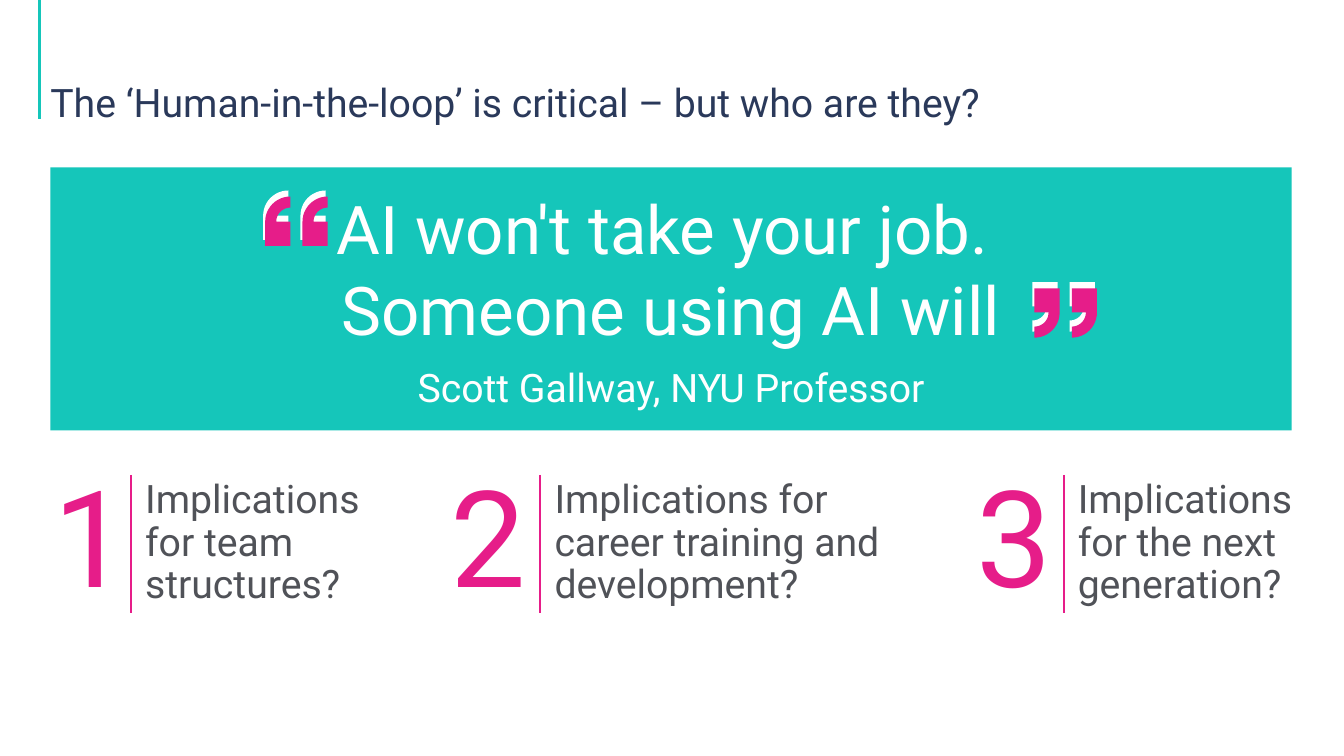
from dataclasses import dataclass
from math import cos, pi, sin

from lxml.etree import SubElement
from pptx import Presentation
from pptx.dml.color import RGBColor
from pptx.enum.shapes import MSO_CONNECTOR, MSO_SHAPE
from pptx.enum.text import MSO_ANCHOR, MSO_AUTO_SIZE, PP_ALIGN
from pptx.oxml.ns import qn
from pptx.util import Inches, Pt


@dataclass(frozen=True)
class Theme:
    font: str = "Roboto"
    navy: str = "2A395A"
    teal: str = "15C6BA"
    pink: str = "E61D89"
    grey: str = "505258"
    white: str = "FFFFFF"
    body: int = 28
    quote: int = 48
    number: int = 96


@dataclass(frozen=True)
class Box:
    left: float
    top: float
    width: float
    height: float

    def x(self, percent):
        return int(self.left + self.width * percent / 100)

    def y(self, percent):
        return int(self.top + self.height * percent / 100)

    def area(self, left, top, width, height):
        """A smaller box, given in percent of this one."""
        return Box(self.x(left), self.y(top),
                   int(self.width * width / 100), int(self.height * height / 100))

    def frame(self):
        return self.left, self.top, self.width, self.height


THEME = Theme()
SLIDE = Box(0, 0, Inches(13.33), Inches(7.5))
TITLE = "The ‘Human-in-the-loop’ is critical – but who are they?"
QUOTE = "AI won't take your job. \vSomeone using AI will"
SPEAKER = "Scott Gallway, NYU Professor"
# Label, then left edge, divider and right edge in percent of the slide width
QUESTIONS = [
    ("Implications for team structures?", 2.93, 9.75, 28.2),
    ("Implications for career training and development?", 32.48, 40.21, 67.37),
    ("Implications for the next generation?", 71.64, 79.14, 100),
]


def assign(target, values):
    for name, value in values.items():
        setattr(target, name, value)


def paint(shape, color):
    shape.fill.solid()
    shape.fill.fore_color.rgb = RGBColor.from_string(color)
    shape.line.fill.background()
    shape.shadow.inherit = False


def set_up(text, anchor, margin=0):
    sides = ("margin_left", "margin_top", "margin_right", "margin_bottom")
    assign(text, {"word_wrap": True, "auto_size": MSO_AUTO_SIZE.NONE,
                  "vertical_anchor": anchor, **dict.fromkeys(sides, Inches(margin))})


def write(para, words, size, color, **layout):
    para.text = words
    assign(para, layout)
    assign(para.font, {"name": THEME.font, "size": Pt(size)})
    para.font.color.rgb = RGBColor.from_string(color)


def rule(page, x, top, bottom, color, weight):
    line = page.shapes.add_connector(MSO_CONNECTOR.STRAIGHT, x, top, x, bottom)
    line.line.color.rgb = RGBColor.from_string(color)
    line.line.width = Pt(weight)
    SubElement(line._element.spPr, qn("a:effectLst"))


def heading(page, box):
    rule(page, SLIDE.x(2.93), SLIDE.top, SLIDE.y(15.73), THEME.teal, 2.25)
    title = page.shapes.title
    assign(title, dict(zip(("left", "top", "width", "height"), box.frame())))
    set_up(title.text_frame, MSO_ANCHOR.BOTTOM)
    write(title.text_frame.paragraphs[0], TITLE, THEME.body, THEME.navy,
          alignment=PP_ALIGN.LEFT, line_spacing=0.9)


def mark_outline():
    """Closing mark in inches: a square head with a curved tail."""
    def tail(radius, angles):
        return [(radius * cos(a), 0.24 + radius * sin(a)) for a in angles]

    quarter = [pi / 2 * step / 12 for step in range(13)]
    return [(0, 0), (0, 0.24), *tail(0.14, quarter),
            *tail(0.25, reversed(quarter)), (0.25, 0)]


def quote_marks(page, left, top, opening):
    outline = mark_outline()
    if opening:
        outline = [(0.25 - x, 0.49 - y) for x, y in outline]
    for color, shift_x, shift_y in ((THEME.white, 0, 0), (THEME.pink, 0.02, 0.06)):
        for gap in (0, 0.37):
            points = [(left + Inches(x + shift_x + gap), top + Inches(y + shift_y))
                      for x, y in outline]
            builder = page.shapes.build_freeform(*points[0])
            builder.add_line_segments(points[1:], close=True)
            paint(builder.convert_to_shape(), color)


def quote_panel(page, box):
    panel = page.shapes.add_shape(MSO_SHAPE.RECTANGLE, *box.frame())
    paint(panel, THEME.teal)
    text = panel.text_frame
    set_up(text, MSO_ANCHOR.MIDDLE)
    write(text.paragraphs[0], QUOTE, THEME.quote, THEME.white,
          alignment=PP_ALIGN.CENTER)
    write(text.add_paragraph(), SPEAKER, THEME.body, THEME.white,
          alignment=PP_ALIGN.CENTER, space_before=Pt(10))
    quote_marks(page, box.x(17.14), box.y(8.81), opening=True)
    quote_marks(page, box.x(79.12), box.y(43.68), opening=False)


def text_box(page, box, words, size, color, anchor):
    text = page.shapes.add_textbox(*box.frame()).text_frame
    set_up(text, anchor, margin=0.14)
    write(text.paragraphs[0], words, size, color, line_spacing=0.9)


def question_row(page, band):
    for number, (label, left, divider, right) in enumerate(QUESTIONS, start=1):
        text_box(page, band.area(divider, 5.17, right - divider, 89.66),
                 label, THEME.body, THEME.grey, MSO_ANCHOR.TOP)
        text_box(page, band.area(left, 0, 6.83, 100),
                 str(number), THEME.number, THEME.pink, MSO_ANCHOR.MIDDLE)
        rule(page, band.x(divider), band.y(10.34), band.y(89.08), THEME.pink, 1.5)


def main():
    deck = Presentation()
    assign(deck, {"slide_width": SLIDE.width, "slide_height": SLIDE.height})
    page = deck.slides.add_slide(deck.slide_layouts[5])
    # Title with its accent line
    heading(page, SLIDE.area(3.75, 5.33, 90.85, 11.33))
    # Quotation on a coloured panel
    quote_panel(page, SLIDE.area(3.75, 22.13, 92.35, 34.8))
    # Three numbered questions
    question_row(page, SLIDE.area(0, 60.4, 100, 23.2))
    deck.save("out.pptx")


if __name__ == "__main__":
    main()
